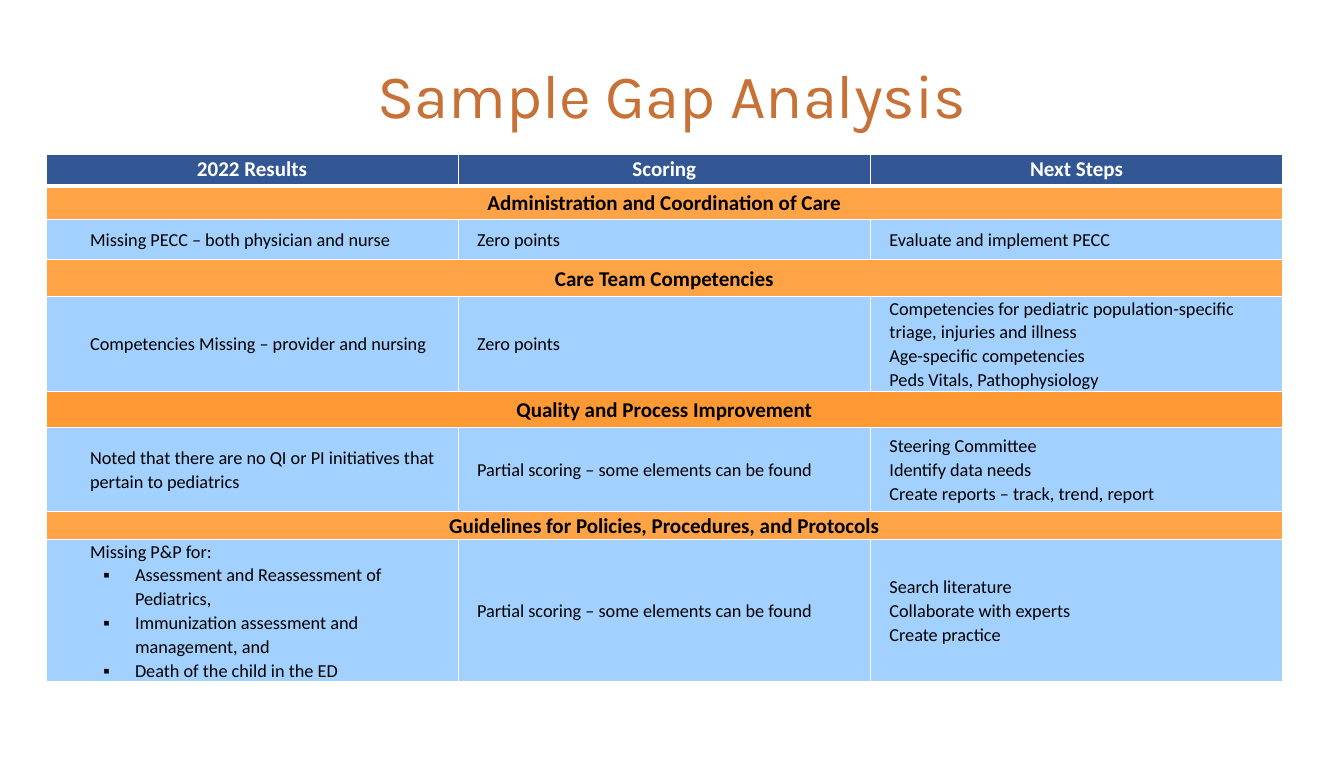
"""Build the Sample Gap Analysis slide: a title over a table in four sections."""
from lxml import etree
from pptx import Presentation
from pptx.dml.color import RGBColor
from pptx.enum.text import MSO_ANCHOR, PP_ALIGN
from pptx.oxml.ns import qn
from pptx.util import Pt

LEFT, CENTER = PP_ALIGN.LEFT, PP_ALIGN.CENTER
TOP, MIDDLE = MSO_ANCHOR.TOP, MSO_ANCHOR.MIDDLE
WHITE, BLACK, NAVY, ORANGE, SKY = "FFFFFF", "000000", "1D4489", "FF9933", "99CCFF"
BULLET = "▪"


def color(code):
    return RGBColor.from_string(code)


def write(frame, lines, align, spacing, style):
    frame.word_wrap = True
    for i, line in enumerate(lines):
        para = frame.paragraphs[0] if i == 0 else frame.add_paragraph()
        para.alignment = align
        if line.startswith(BULLET):
            props = para._p.get_or_add_pPr()
            props.set("marL", str(Pt(32)))
            props.set("indent", str(-Pt(22.5)))
            etree.SubElement(props, qn("a:buFont")).set("typeface", "Calibri")
            etree.SubElement(props, qn("a:buChar")).set("char", BULLET)
        para.line_spacing = spacing
        run = para.add_run()
        run.text = line.removeprefix(BULLET)
        for name, value in style.items():
            if name == "color":
                run.font.color.rgb = color(value)
            else:
                setattr(run.font, name, value)


deck = Presentation()
deck.slide_width, deck.slide_height = Pt(957.6), Pt(540)
slide = deck.slides.add_slide(deck.slide_layouts[6])

rows = [
    (22.3, ["2022 Results", "Scoring", "Next Steps"]),
    (23.8, ["Administration and Coordination of Care"]),
    (28.8, ["Missing PECC – both physician and nurse", "Zero points",
            "Evaluate and implement PECC"]),
    (25.9, ["Care Team Competencies"]),
    (65.5, ["Competencies Missing – provider and nursing", "Zero points",
            "Competencies for pediatric population-specific triage, injuries and illness\n"
            "Age-specific competencies\nPeds Vitals, Pathophysiology"]),
    (25.9, ["Quality and Process Improvement"]),
    (59.8, ["Noted that there are no QI or PI initiatives that pertain to pediatrics",
            "Partial scoring – some elements can be found",
            "Steering Committee\nIdentify data needs\nCreate reports – track, trend, report"]),
    (19.4, ["Guidelines for Policies, Procedures, and Protocols"]),
    (99.4, ["Missing P&P for:\n▪Assessment and Reassessment of Pediatrics,\n"
            "▪Immunization assessment and management, and\n▪Death of the child in the ED",
            "Partial scoring – some elements can be found",
            "Search literature\nCollaborate with experts\nCreate practice"]),
]
total = sum(height for height, texts in rows)
table = slide.shapes.add_table(len(rows), 3, Pt(32.7), Pt(110.2), Pt(881.3), Pt(total)).table
table.first_row = table.horz_banding = False
for col in table.columns:
    col.width = Pt(293.76)

for r, (height, texts) in enumerate(rows):
    table.rows[r].height = Pt(height)
    head, band = r == 0, len(texts) == 1
    strong = head or band
    fill = NAVY if head else ORANGE if band else SKY
    style = {"name": "Calibri", "size": Pt(15 if strong else 13), "bold": strong,
             "color": WHITE if head else BLACK}
    if band:
        table.cell(r, 0).merge(table.cell(r, 2))
    for c in range(3):
        cell = table.cell(r, c)
        cell.fill.solid()
        cell.fill.fore_color.rgb = color(fill)
        props = cell._tc.get_or_add_tcPr()
        if r != 5:
            tint = props.find(".//" + qn("a:srgbClr"))
            etree.SubElement(tint, qn("a:alpha")).set("val", "90000")
        for i, side in enumerate(("lnL", "lnR", "lnT", "lnB")):
            thick = (r, side) in ((0, "lnB"), (1, "lnT"))
            edge = etree.Element(qn("a:" + side), w=str(Pt(3 if thick else 1)))
            solid = etree.SubElement(edge, qn("a:solidFill"))
            etree.SubElement(solid, qn("a:srgbClr")).set("val", WHITE)
            props.insert(i, edge)
        cell.margin_top = cell.margin_bottom = 0
        cell.margin_right = Pt(4.5)
        cell.margin_left = Pt(4.5 if strong else 31.5 if c == 0 else 13.5)
        cell.vertical_anchor = TOP if head else MIDDLE
        if c < len(texts):
            write(cell.text_frame, texts[c].split("\n"), CENTER if strong else LEFT, 1.07, style)

title = slide.shapes.add_textbox(Pt(48), Pt(21.6), Pt(862), Pt(90)).text_frame
title.vertical_anchor = MIDDLE
write(title, ["Sample Gap Analysis"], CENTER, 1.0,
      {"name": "Karla", "size": Pt(44), "color": "C87137"})

deck.save("out.pptx")
